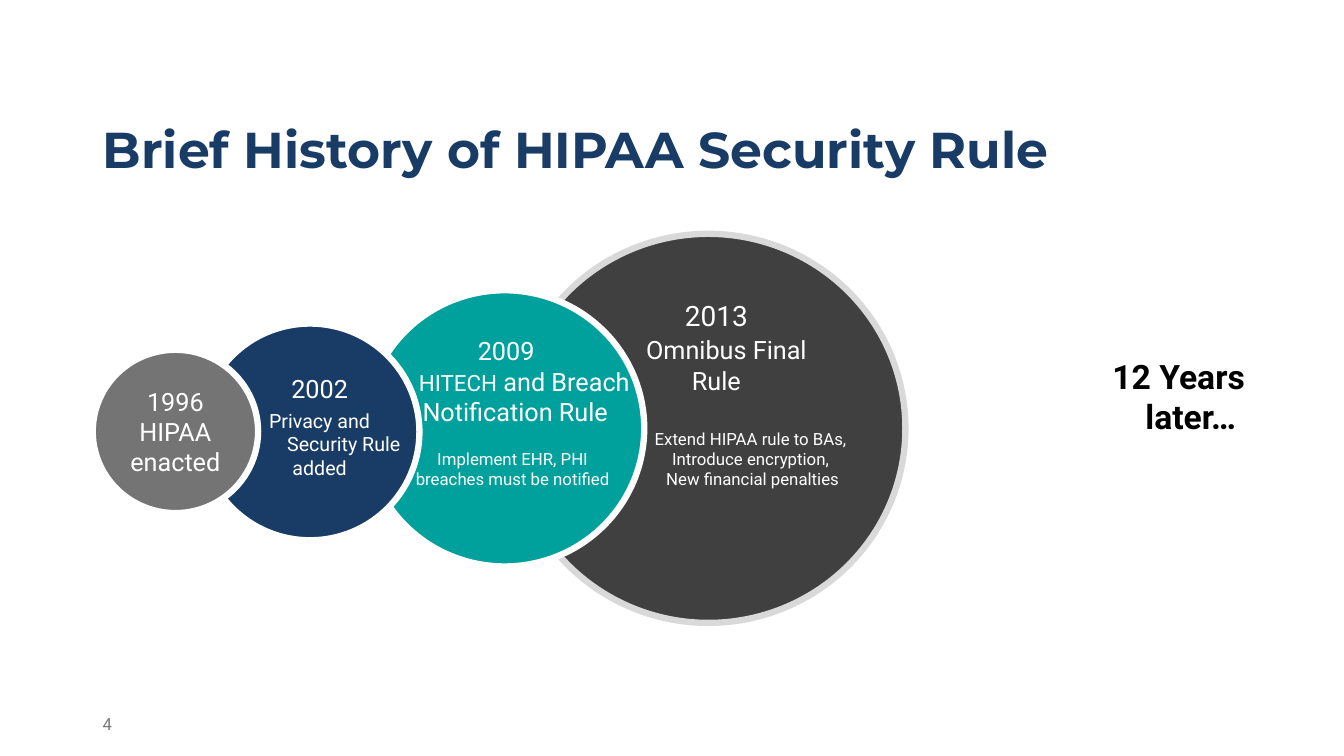
import pptx
import pptx.util
import pptx.dml.color
import pptx.enum.shapes
import pptx.enum.text

Inches = pptx.util.Inches
Pt = pptx.util.Pt
MSO_ANCHOR = pptx.enum.text.MSO_ANCHOR
MSO_AUTO_SIZE = pptx.enum.text.MSO_AUTO_SIZE
PP_ALIGN = pptx.enum.text.PP_ALIGN

THEME = {
    "heading_font": "Montserrat",
    "body_font": "Roboto",
    "navy": "193C66",
    "teal": "00A19C",
    "charcoal": "404040",
    "gray": "747474",
    "silver": "D9D9D9",
    "number_gray": "797979",
    "white": "FFFFFF",
    "black": "000000",
    "title": 36,
    "callout": 24,
    "large": 20,
    "regular": 18,
    "acronym": 16,
    "medium": 14,
    "small": 12,
}


def add_run(paragraph, text, size, color="white", font="body_font", bold=False):
    run = paragraph.add_run()
    run.text = text
    run.font.name = THEME[font]
    run.font.size = Pt(THEME[size])
    run.font.bold = bold
    run.font.color.rgb = pptx.dml.color.RGBColor.from_string(THEME[color])


def fill_text(shape, paragraphs, color="white", bold=False):
    frame = shape.text_frame
    frame.word_wrap = True
    frame.margin_left = frame.margin_right = frame.margin_top = frame.margin_bottom = 0
    for index, (runs, first_indent, right_margin, space_before) in enumerate(paragraphs):
        paragraph = frame.add_paragraph() if index else frame.paragraphs[0]
        properties = paragraph._p.get_or_add_pPr()
        properties.set("marL", "0")
        properties.set("marR", str(Inches(right_margin)))
        properties.set("indent", str(Inches(first_indent)))
        paragraph.alignment = PP_ALIGN.CENTER
        if space_before:
            paragraph.space_before = Pt(space_before)
        for text, size in runs:
            add_run(paragraph, text, size, color, bold=bold)


presentation = pptx.Presentation()
presentation.slide_width = Inches(13.33)
presentation.slide_height = Inches(7.5)
slide = presentation.slides.add_slide(presentation.slide_layouts[5])

title = slide.shapes.title
title.left, title.top, title.width, title.height = map(Inches, (0.92, 0.38, 11.5, 1.45))
title.text_frame.auto_size = MSO_AUTO_SIZE.NONE
title.text_frame.vertical_anchor = MSO_ANCHOR.BOTTOM
title_paragraph = title.text_frame.paragraphs[0]
title_paragraph.alignment = PP_ALIGN.LEFT
title_paragraph.line_spacing = 0.9
add_run(title_paragraph, "Brief History of HIPAA Security Rule", "title", "navy", "heading_font", True)

slide_number = slide.shapes.add_textbox(Inches(0.92), Inches(6.98), Inches(3), Inches(0.4))
slide_number.text_frame.vertical_anchor = MSO_ANCHOR.MIDDLE
add_run(slide_number.text_frame.paragraphs[0], "4", "small", "number_gray")

circles = [
    (5.07, 2.32, 3.91, 3.86, "charcoal", "silver"),
    (3.62, 2.88, 2.77, 2.74, "teal", "white"),
    (1.99, 3.21, 2.17, 2.15, "navy", "white"),
    (0.92, 3.47, 1.64, 1.62, "gray", "white"),
]
for left, top, width, height, fill, outline in circles:
    circle = slide.shapes.add_shape(
        pptx.enum.shapes.MSO_SHAPE.OVAL, Inches(left), Inches(top), Inches(width), Inches(height)
    )
    circle.shadow.inherit = False
    circle.fill.solid()
    circle.fill.fore_color.rgb = pptx.dml.color.RGBColor.from_string(THEME[fill])
    circle.line.color.rgb = pptx.dml.color.RGBColor.from_string(THEME[outline])
    circle.line.width = Pt(4.5)

circle.text_frame.vertical_anchor = MSO_ANCHOR.MIDDLE
fill_text(circle, [
    ([("1996", "regular")], 0, 0, 0),
    ([("HIPAA enacted", "regular")], 0, 0, 0),
])

labels = [
    (2.18, 3.7, 1.98, 1.08, "white", False, [
        ([("2002", "regular")], 0, 0, 0),
        ([("Privacy and", "medium")], 0, 0, 4),
        ([("Security Rule added", "medium")], 0.48, 0, 0),
    ]),
    (3.85, 3.33, 2.52, 0.91, "white", False, [
        ([("2009", "regular")], 0, 0.18, 0),
        ([("HITECH", "acronym"), (" and Breach Notification Rule", "regular")], 0.18, 0, 0),
    ]),
    (6.01, 2.96, 2.19, 0.98, "white", False, [
        ([("2013", "large")], 0, 0, 0),
        ([("Omnibus Final Rule", "regular")], 0.2, 0, 2),
    ]),
    (4.1, 4.45, 1.97, 0.4, "white", False, [
        ([("Implement EHR, PHI breaches must be notified", "small")], 0, 0, 0),
    ]),
    (5.96, 4.25, 3.01, 0.61, "white", False, [
        ([("Extend HIPAA rule to BAs,", "small")], 0, 0.04, 0),
        ([("Introduce encryption,", "small")], 0, 0.04, 0),
        ([("New financial penalties", "small")], 0, 0, 0),
    ]),
    (10.43, 3.53, 2.52, 0.81, "black", True, [
        ([("12 Years", "callout")], 0, 0, 0),
        ([("later…", "callout")], 0.24, 0, 0),
    ]),
]
for left, top, width, height, color, bold, paragraphs in labels:
    label = slide.shapes.add_textbox(Inches(left), Inches(top), Inches(width), Inches(height))
    label.text_frame.auto_size = MSO_AUTO_SIZE.SHAPE_TO_FIT_TEXT
    fill_text(label, paragraphs, color, bold)

presentation.save("out.pptx")
